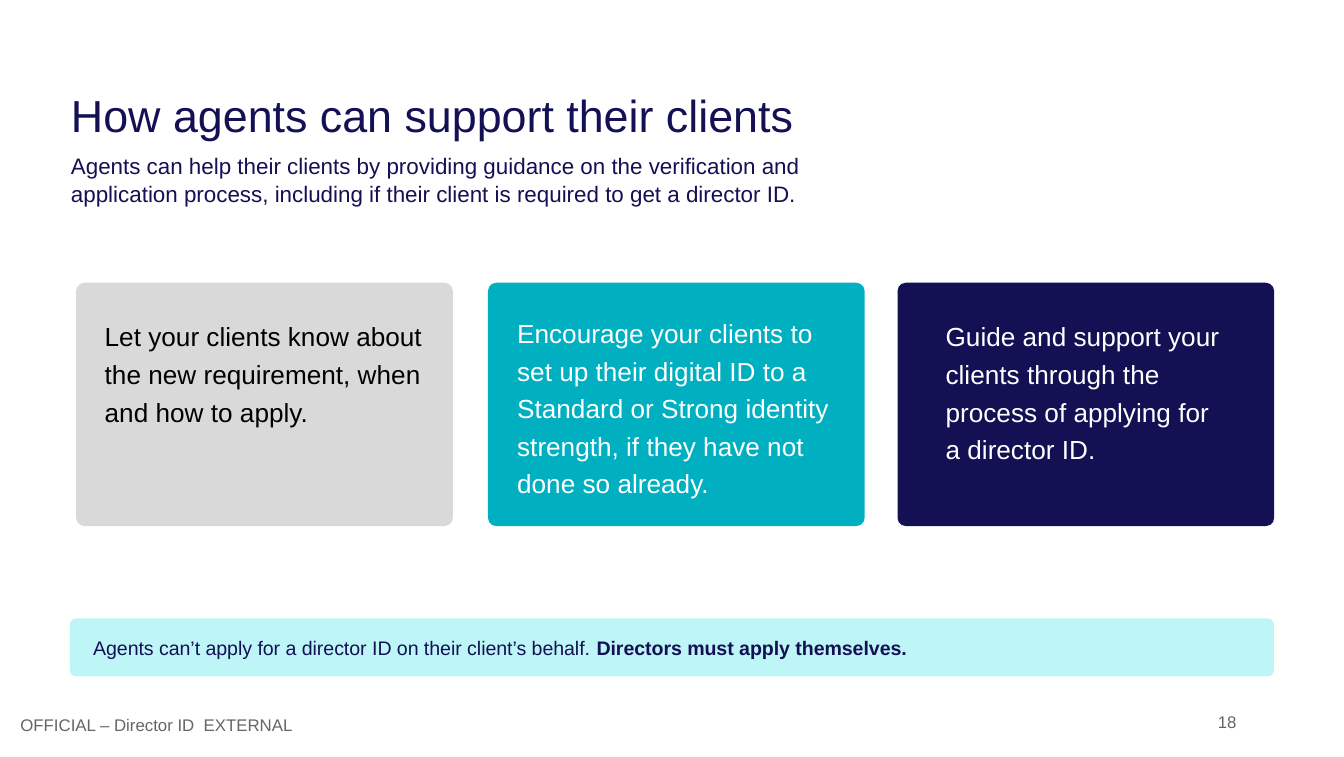
from pptx import Presentation
from pptx.dml.color import RGBColor
from pptx.enum.shapes import MSO_SHAPE as Kind
from pptx.enum.text import MSO_ANCHOR as Anchor, MSO_AUTO_SIZE as Fit, PP_ALIGN as Align
from pptx.util import Pt

NAVY, TEAL, GREY, AQUA = "131054", "00B0C1", "D9D9D9", "BEF6F8"
WHITE, BLACK, DIM = "FFFFFF", "000000", "666666"

deck = Presentation()
deck.slide_width, deck.slide_height = Pt(720), Pt(405.36)
slide = deck.slides.add_slide(deck.slide_layouts[5])
shapes = slide.shapes


def panel(x, y, w, h, color, curve):
    box = shapes.add_shape(Kind.ROUNDED_RECTANGLE, Pt(x), Pt(y), Pt(w), Pt(h))
    box.adjustments[0] = curve
    box.fill.solid()
    box.fill.fore_color.rgb = RGBColor.from_string(color)
    box.line.fill.background()
    box.shadow.inherit = False
    return box


def write(box, parts, size, color, pad=(0, 0, 0, 0), anchor=Anchor.TOP, **form):
    """Fill a shape with one paragraph; parts are (text, bold) pairs."""
    frame = box.text_frame
    frame.word_wrap, frame.auto_size = True, Fit.NONE
    frame.vertical_anchor = anchor
    for side, gap in zip(("left", "top", "right", "bottom"), pad):
        setattr(frame, f"margin_{side}", Pt(gap))
    para = frame.paragraphs[0]
    for key, value in ({"alignment": Align.LEFT} | form).items():
        setattr(para, key, value)
    for text, bold in parts:
        run = para.add_run()
        run.text = text
        look = {"name": "Arial", "size": Pt(size), "bold": bold}
        for key, value in look.items():
            setattr(run.font, key, value)
        run.font.color.rgb = RGBColor.from_string(color)


# Title and lead
title = shapes.title
title.left, title.top, title.width, title.height = Pt(38), Pt(46), Pt(605.5), Pt(31)
write(title, [("How agents can support their clients", False)], 24, NAVY,
      line_spacing=Pt(30))

lead = shapes.add_textbox(Pt(38), Pt(81), Pt(426.2), Pt(29.5))
write(lead, [("Agents can help their clients by providing guidance on the verification and "
              "application process, including if their client is required to get a director ID.",
              False)], 12, NAVY, line_spacing=Pt(15), space_after=Pt(6))

# Three cards: left, fill, text colour, text left, text top, text width, text height, text
cards = [
    (40.8, GREY, BLACK, 49, 164.8, 186.5, 66,
     "Let your clients know about the new requirement, when and how to apply."),
    (261.4, TEAL, WHITE, 270, 163, 194.4, 107,
     "Encourage your clients to set up their digital ID to a Standard or Strong identity "
     "strength, if they have not done so already."),
    (480.8, NAVY, WHITE, 499.5, 164.8, 164.2, 87,
     "Guide and support your clients through the process of applying for a director ID."),
]
for left, fill, ink, x, y, w, h, text in cards:
    panel(left, 151.4, 201.8, 130.3, fill, 0.034)
    label = shapes.add_textbox(Pt(x), Pt(y), Pt(w), Pt(h))
    write(label, [(text, False)], 14, ink, pad=(7.2, 3.6, 7.2, 3.6),
          line_spacing=1.2, space_after=Pt(6))

# Notice bar
bar = panel(37.5, 331.2, 645, 31, AQUA, 0.106)
write(bar, [("Agents can’t apply for a director ID on their client’s behalf. ", False),
            ("Directors must apply themselves.", True)],
      10.5, NAVY, pad=(11.5, 8.5, 11.5, 11.5), space_after=Pt(6))

# Footer
mark = shapes.add_textbox(Pt(10.9), Pt(376), Pt(243), Pt(21.6))
write(mark, [("OFFICIAL – Director ID  EXTERNAL", False)], 9, DIM,
      anchor=Anchor.MIDDLE, line_spacing=Pt(13), space_after=Pt(6))
page = shapes.add_textbox(Pt(617.8), Pt(376), Pt(44.6), Pt(21.6))
write(page, [("18", False)], 9, DIM, anchor=Anchor.MIDDLE, alignment=Align.RIGHT)

deck.save("out.pptx")
